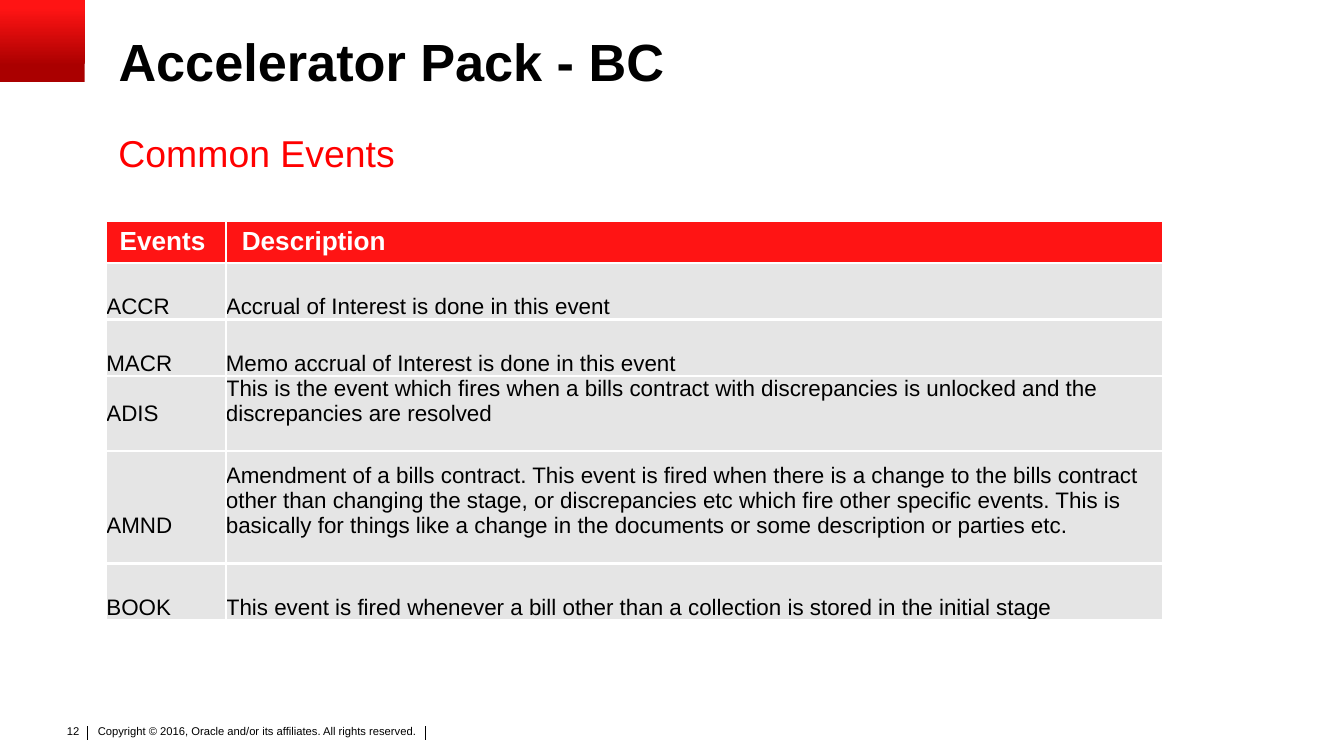
from lxml import etree
from pptx import Presentation
from pptx.dml.color import RGBColor
from pptx.enum.shapes import MSO_CONNECTOR, MSO_SHAPE
from pptx.enum.text import MSO_ANCHOR, MSO_AUTO_SIZE, PP_ALIGN
from pptx.oxml.ns import qn
from pptx.util import Cm, Pt

BLACK = RGBColor(0x00, 0x00, 0x00)
WHITE = RGBColor(0xFF, 0xFF, 0xFF)
RED = RGBColor(0xFF, 0x00, 0x00)
BRIGHT_RED = RGBColor(0xFF, 0x14, 0x14)
DARK_RED = RGBColor(0xAA, 0x00, 0x00)
GREY = RGBColor(0xE5, 0xE5, 0xE5)

FONT = "Arial"
TITLE_ONLY = 5
STRAIGHT = MSO_CONNECTOR.STRAIGHT
RECTANGLE = MSO_SHAPE.RECTANGLE
TOP, MIDDLE, BOTTOM = MSO_ANCHOR.TOP, MSO_ANCHOR.MIDDLE, MSO_ANCHOR.BOTTOM
LEFT, RIGHT = PP_ALIGN.LEFT, PP_ALIGN.RIGHT
NO_AUTOFIT = MSO_AUTO_SIZE.NONE

COLUMN_WIDTHS = (2.26, 17.7)
HEADINGS = ("Events", "Description")
HEADING_HEIGHT = 0.79
HEADING_INSETS = (0.25, 0.3)
# event, description lines, row height, anchors of both cells, bottom inset
EVENTS = (
    ("ACCR", ["Accrual of Interest is done in this event"],
     1.07, (BOTTOM, BOTTOM), 0),
    ("MACR", ["Memo accrual of Interest is done in this event"],
     1.07, (BOTTOM, BOTTOM), 0),
    ("ADIS", ["This is the event which fires when a bills contract with "
              "discrepancies is unlocked and the discrepancies are resolved"],
     1.41, (MIDDLE, TOP), 0),
    ("AMND", ["Amendment of a bills contract. This event is fired when there "
              "is a change to the bills contract",
              "other than changing the stage, or discrepancies etc which fire "
              "other specific events. This is",
              "basically for things like a change in the documents or some "
              "description or parties etc."],
     2.13, (BOTTOM, BOTTOM), 0.47),
    ("BOOK", ["This event is fired whenever a bill other than a collection "
              "is stored in the initial stage"],
     1.07, (BOTTOM, BOTTOM), 0),
)


def write_lines(frame, lines, size, color, bold=False, align=LEFT):
    for index, line in enumerate(lines):
        paragraph = frame.add_paragraph() if index else frame.paragraphs[0]
        paragraph.alignment = align
        run = paragraph.add_run()
        run.text = line
        run.font.name = FONT
        run.font.size = Pt(size)
        run.font.bold = bold
        run.font.color.rgb = color


def set_insets(target, left=0, top=0, right=0, bottom=0):
    """Set the margins, in centimetres, of a text frame or a table cell."""
    target.margin_left, target.margin_top = Cm(left), Cm(top)
    target.margin_right, target.margin_bottom = Cm(right), Cm(bottom)


def add_text(slide, box, text, size, color, insets=(), align=LEFT, wrap=True):
    frame = slide.shapes.add_textbox(*map(Cm, box)).text_frame
    frame.word_wrap = wrap
    frame.vertical_anchor = TOP
    set_insets(frame, *insets)
    write_lines(frame, [text], size, color, align=align)


def add_corner_block(slide, box):
    block = slide.shapes.add_shape(RECTANGLE, *map(Cm, box))
    block.shadow.inherit = False
    block.line.fill.background()
    block.fill.gradient()
    block.fill.gradient_angle = 90
    stops = ((0.2, DARK_RED), (0.9, BRIGHT_RED))
    for stop, (position, color) in zip(block.fill.gradient_stops, stops):
        stop.position = position
        stop.color.rgb = color


def place_title(slide, box, text):
    title = slide.shapes.title
    title.left, title.top, title.width, title.height = map(Cm, box)
    frame = title.text_frame
    frame.auto_size = NO_AUTOFIT
    frame.word_wrap = True
    frame.vertical_anchor = TOP
    set_insets(frame)
    write_lines(frame, [text], 28, BLACK, bold=True)
    frame.paragraphs[0].line_spacing = 0.9


def add_cell_borders(cell, sides):
    """Draw white borders on the given sides, listed in the order L, R, T, B."""
    properties = cell._tc.get_or_add_tcPr()
    for index, side in enumerate(sides):
        line = etree.Element(qn(f"a:ln{side}"), w=str(Pt(1.5)))
        fill = etree.SubElement(line, qn("a:solidFill"))
        etree.SubElement(fill, qn("a:srgbClr"), val=str(WHITE))
        properties.insert(index, line)


def add_events_table(slide, box):
    row_count, column_count = len(EVENTS) + 1, len(HEADINGS)
    table = slide.shapes.add_table(
        row_count, column_count, *map(Cm, box)).table
    for column, width in zip(table.columns, COLUMN_WIDTHS):
        column.width = Cm(width)

    table.rows[0].height = Cm(HEADING_HEIGHT)
    for column, heading in enumerate(HEADINGS):
        cell = table.cell(0, column)
        cell.vertical_anchor = MIDDLE
        set_insets(cell, HEADING_INSETS[column], 0.1, 0.25, 0.1)
        write_lines(cell.text_frame, [heading], 14, WHITE, bold=True)

    for row, (event, description, height, anchors, inset) in enumerate(EVENTS, 1):
        table.rows[row].height = Cm(height)
        for column, lines in enumerate(([event], description)):
            cell = table.cell(row, column)
            cell.vertical_anchor = anchors[column]
            set_insets(cell, bottom=inset)
            write_lines(cell.text_frame, lines, 12, BLACK)

    for row in range(row_count):
        for column in range(column_count):
            cell = table.cell(row, column)
            cell.fill.solid()
            cell.fill.fore_color.rgb = GREY if row else BRIGHT_RED
            inner = (("L", column > 0), ("R", column < column_count - 1),
                     ("T", row > 0), ("B", row < row_count - 1))
            add_cell_borders(cell, [side for side, shown in inner if shown])


def add_footer(slide, box):
    left, top, width, height = box
    add_text(slide, (left, top, 0.76, 0.51), "12", 6, BLACK,
             (0.25, 0.13, 0.25, 0.13), RIGHT, wrap=False)
    add_text(slide, (left + 0.76, top + 0.08, width - 0.76, height - 0.08),
             "Copyright © 2016, Oracle and/or its affiliates. "
             "All rights reserved.", 6, BLACK, (0.1, 0.05, 0.1, 0.05))
    for offset in (0.67, 7.05):
        x = Cm(left + offset)
        divider = slide.shapes.add_connector(
            STRAIGHT, x, Cm(top + 0.16), x, Cm(top + 0.41))
        divider.line.color.rgb = BLACK
        divider.line.width = Pt(0.5)
        etree.SubElement(divider._element.spPr, qn("a:effectLst"))


def main():
    presentation = Presentation()
    presentation.slide_width, presentation.slide_height = Cm(25.4), Cm(14.28)
    slide = presentation.slides.add_slide(
        presentation.slide_layouts[TITLE_ONLY])
    add_corner_block(slide, (0, 0, 1.6, 1.55))
    place_title(slide, (2.24, 0.69, 21.59, 2.11), "Accelerator Pack - BC")
    add_text(slide, (2.24, 2.46, 22.86, 0.84), "Common Events", 20, RED)
    add_events_table(slide, (2.01, 4.17, 19.96, 7.54))
    add_footer(slide, (0.99, 13.56, 7.72, 0.69))
    presentation.save("out.pptx")


if __name__ == "__main__":
    main()
